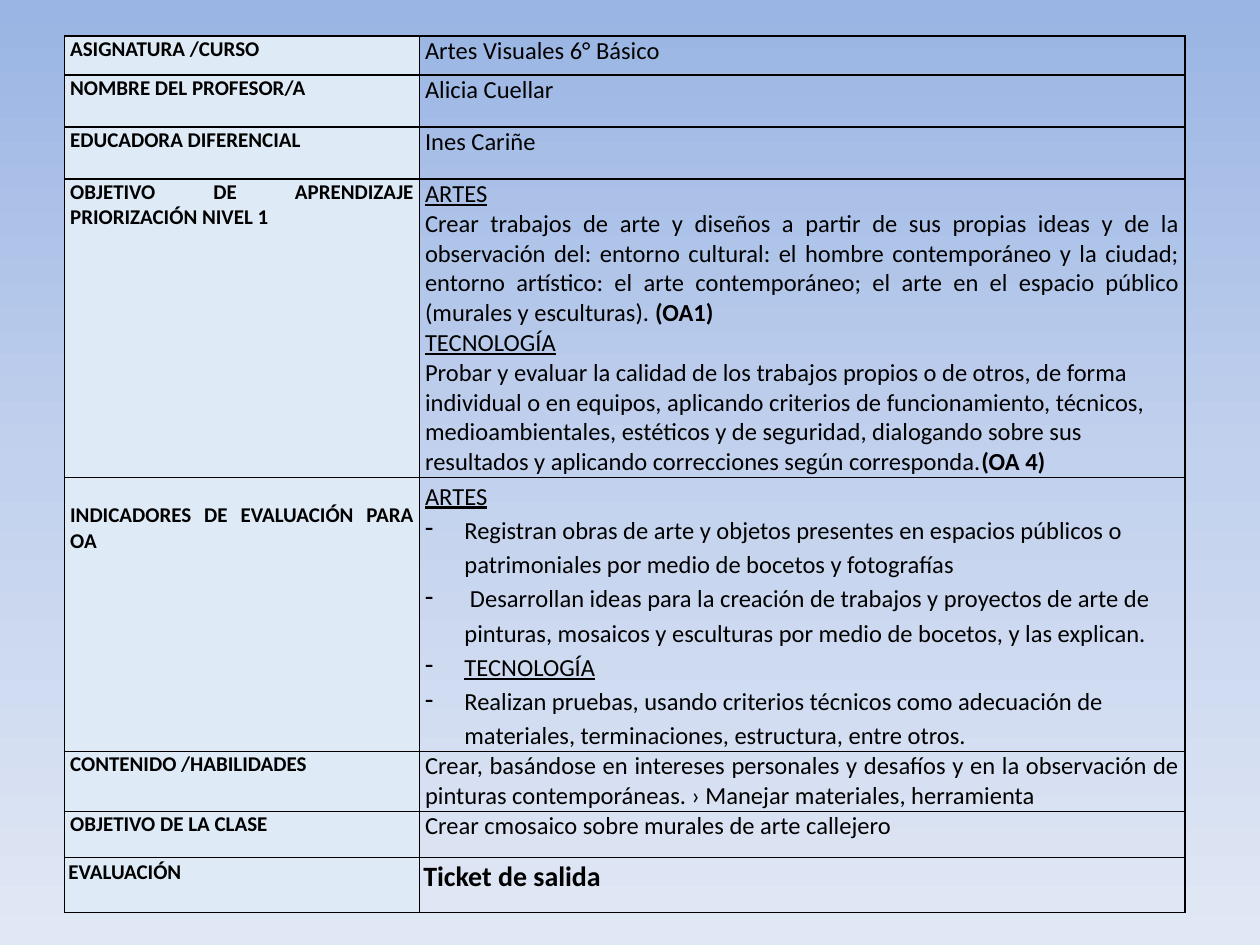
from dataclasses import dataclass

from lxml import etree
from copy import deepcopy
from pptx import Presentation
from pptx.dml.color import RGBColor
from pptx.enum import text
from pptx.oxml import ns
from pptx.util import Pt


@dataclass(frozen=True)
class Theme:
    font: str = "Calibri"
    ink: str = "000000"
    label_fill: str = "DEEAF6"
    sky: tuple = ((0, "9AB5E4"), (0.5, "C2D1ED"), (1, "E1E8F5"))
    label_size: int = 12
    body_size: int = 14
    ticket_size: int = 16
    border: int = 1


THEME = Theme()
BOLD = {"bold": True}
UNDERLINE = {"underline": True}
JUSTIFIED = {"alignment": text.PP_ALIGN.JUSTIFY}
LEFT = {"alignment": text.PP_ALIGN.LEFT}
SPACED = {**LEFT, "line_spacing": 1.15}
BULLET_INDENT = 22.5

MARGINS = {"margin_left": 3.2, "margin_right": 3.2, "margin_top": 0, "margin_bottom": 0}
LOWERED = {**MARGINS, "margin_top": 14.6}
PADDED = {"margin_left": 2.2, "margin_right": 2.2, "margin_top": 1.4, "margin_bottom": 1.4}


def para(content, fmt=JUSTIFIED, bullet=None, **font):
    """Describe a paragraph; content is a string or a list of (string, font values)."""
    runs = [(content, font)] if isinstance(content, str) else content
    return runs, fmt, bullet


def item(content, **font):
    return para(content, SPACED, "-", **font)


OBJECTIVES = [
    para("ARTES", **UNDERLINE),
    para([("Crear trabajos de arte y diseños a partir de sus propias ideas y de la "
           "observación del: entorno cultural: el hombre contemporáneo y la ciudad; "
           "entorno artístico: el arte contemporáneo; el arte en el espacio público "
           "(murales y esculturas). ", {}), ("(OA1)", BOLD)]),
    para("TECNOLOGÍA", **UNDERLINE),
    para([("Probar y evaluar la calidad de los trabajos propios o de otros, de forma "
           "individual o en equipos, aplicando criterios de funcionamiento, técnicos, "
           "medioambientales, estéticos y de seguridad, dialogando sobre sus resultados "
           "y aplicando correcciones según corresponda.", {}), ("(OA 4)", BOLD)], LEFT),
]
INDICATORS = [
    para("ARTES", SPACED, **UNDERLINE),
    item("Registran obras de arte y objetos presentes en espacios públicos o "
         "patrimoniales por medio de bocetos y fotografías"),
    item(" Desarrollan ideas para la creación de trabajos y proyectos de arte de "
         "pinturas, mosaicos y esculturas por medio de bocetos, y las explican."),
    item("TECNOLOGÍA", **UNDERLINE),
    item("Realizan pruebas, usando criterios técnicos como adecuación de "
         "materiales, terminaciones, estructura, entre otros."),
]
CONTENTS = ("Crear, basándose en intereses personales y desafíos y en la observación de "
            "pinturas contemporáneas. › Manejar materiales, herramienta")
TICKET = para("Ticket de salida", bold=True, size=Pt(THEME.ticket_size))

# Row height, label, body paragraphs, label margins, body margins
ROWS = [
    (22.3, "ASIGNATURA /CURSO", [para("Artes Visuales 6° Básico")], MARGINS, MARGINS),
    (29.7, "NOMBRE DEL PROFESOR/A", [para("Alicia Cuellar")], MARGINS, MARGINS),
    (29.7, "EDUCADORA DIFERENCIAL", [para("Ines Cariñe")], MARGINS, MARGINS),
    (170.3, "OBJETIVO DE APRENDIZAJE PRIORIZACIÓN NIVEL 1", OBJECTIVES, MARGINS, MARGINS),
    (156.5, "INDICADORES DE EVALUACIÓN PARA OA", INDICATORS, LOWERED, MARGINS),
    (34.3, "CONTENIDO /HABILIDADES", [para(CONTENTS)], MARGINS, MARGINS),
    (26.3, "OBJETIVO DE LA CLASE", [para("Crear cmosaico sobre murales de arte callejero")],
     MARGINS, MARGINS),
    (31.4, "EVALUACIÓN", [TICKET], PADDED, PADDED),
]
COLUMNS = (202.8, 437.6)


def set_values(obj, values):
    for name, value in values.items():
        setattr(obj, name, value)


def paint_background(s):
    fill = s.background.fill
    fill.gradient()
    fill.gradient_angle = 270
    stop_list = next(s.element.iter(ns.qn("a:gsLst")))
    stop_list.insert(1, deepcopy(stop_list[0]))
    for stop, (position, color) in zip(fill.gradient_stops, THEME.sky):
        stop.position = position
        stop.color.rgb = RGBColor.from_string(color)


def add_borders(cell):
    tc_pr = cell._tc.get_or_add_tcPr()
    for side in ("lnL", "lnR", "lnT", "lnB"):
        line = etree.SubElement(tc_pr, ns.qn(f"a:{side}"), w=str(Pt(THEME.border)))
        fill = etree.SubElement(line, ns.qn("a:solidFill"))
        etree.SubElement(fill, ns.qn("a:srgbClr"), val=THEME.ink)


def add_bullet(p, char):
    p_pr = p._p.get_or_add_pPr()
    p_pr.set("marL", str(Pt(BULLET_INDENT)))
    p_pr.set("indent", str(-Pt(BULLET_INDENT)))
    etree.SubElement(p_pr, ns.qn("a:buChar"), char=char)


def write_cell(cell, paragraphs, size, margins):
    set_values(cell, {name: Pt(value) for name, value in margins.items()})
    add_borders(cell)
    tf = cell.text_frame
    for i, (runs, fmt, bullet) in enumerate(paragraphs):
        p = tf.add_paragraph() if i else tf.paragraphs[0]
        set_values(p, fmt)
        if bullet:
            add_bullet(p, bullet)
        for content, font in runs:
            r = p.add_run()
            r.text = content
            base = {"name": THEME.font, "size": Pt(size), "bold": False}
            set_values(r.font, {**base, **font})
            r.font.color.rgb = RGBColor.from_string(THEME.ink)


def add_plan_table(s):
    heights = [row[0] for row in ROWS]
    frame = s.shapes.add_table(len(ROWS), len(COLUMNS), Pt(36.9), Pt(20.7),
                               Pt(sum(COLUMNS)), Pt(sum(heights)))
    table = frame.table
    set_values(table, {"first_row": False, "horz_banding": False})
    for column, width in zip(table.columns, COLUMNS):
        column.width = Pt(width)
    for row, (height, label, body, label_margins, body_margins) in zip(table.rows, ROWS):
        row.height = Pt(height)
        label_cell, body_cell = row.cells
        write_cell(label_cell, [para(label, **BOLD)], THEME.label_size, label_margins)
        label_cell.fill.solid()
        label_cell.fill.fore_color.rgb = RGBColor.from_string(THEME.label_fill)
        write_cell(body_cell, body, THEME.body_size, body_margins)
        body_cell.fill.background()


def main():
    prs = Presentation()
    set_values(prs, {"slide_width": Pt(720), "slide_height": Pt(540)})
    s = prs.slides.add_slide(prs.slide_layouts[6])
    paint_background(s)
    add_plan_table(s)
    prs.save("out.pptx")


if __name__ == "__main__":
    main()
